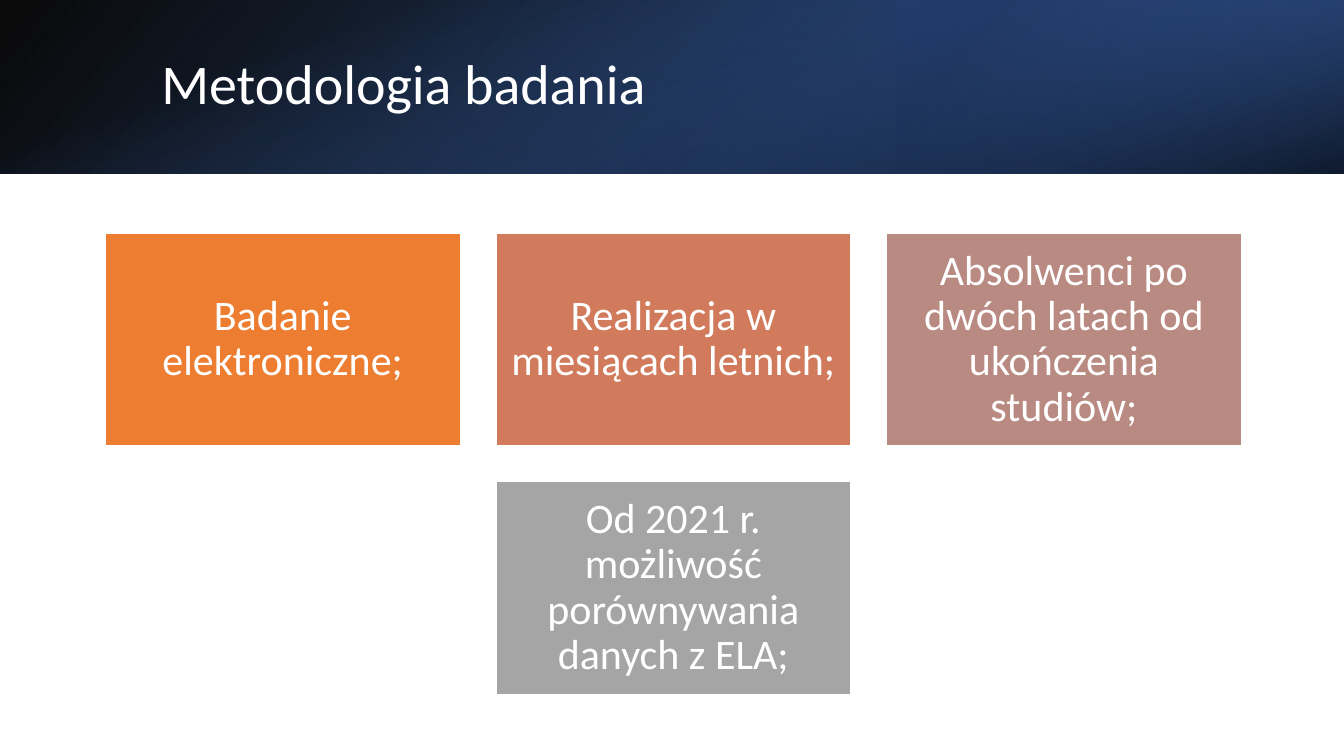
"""Builds a slide on survey method: a gradient header and four cards."""
from lxml import etree
from pptx import Presentation
from pptx.dml.color import RGBColor
from pptx.enum.shapes import MSO_SHAPE
from pptx.enum.text import MSO_ANCHOR, MSO_AUTO_SIZE, PP_ALIGN
from pptx.oxml.ns import qn
from pptx.util import Pt

RECT = MSO_SHAPE.RECTANGLE
MIDDLE = MSO_ANCHOR.MIDDLE
LEFT, CENTER = PP_ALIGN.LEFT, PP_ALIGN.CENTER
FIXED = MSO_AUTO_SIZE.NONE

COLORS = {
    "white": "FFFFFF", "black": "000000", "navy": "203864",
    "deep": "2F5597", "blue": "4472C4", "orange": "ED7D31",
    "coral": "D17B5C", "rose": "B98A82", "gray": "A5A5A5",
}
FONT = "Calibri"
WIDE, HIGH, HEAD = 960, 540, 124
TITLE = "Metodologia badania"
BANDS = [
    ((0, 0, WIDE, HEAD), 0, True, 140,
     [(0, "black", 96), (100, "deep", 100)]),
    ((WIDE * 2 / 3, 0, WIDE / 3, HEAD), 180, True, 320,
     [(19, "navy", 68), (100, "blue", 79)]),
    (((WIDE - HEAD) / 2, (HEAD - WIDE) / 2, HEAD, WIDE), 90, False, 340,
     [(23, "blue", 0), (99, "black", 74)]),
]
CARDS = [
    ("Badanie elektroniczne;", "orange", 0, 0),
    ("Realizacja w miesiącach letnich;", "coral", 1, 0),
    ("Absolwenci po dwóch latach od ukończenia studiów;", "rose", 2, 0),
    ("Od 2021 r. możliwość porównywania danych z ELA;", "gray", 1, 1),
]
CARD_W, CARD_H, GAP, TOP, INSET = 253.5, 152, 25.5, 166.5, 8.64


def color(name):
    return RGBColor.from_string(COLORS[name])


def add_rect(slide, box):
    rect = slide.shapes.add_shape(RECT, *map(Pt, box))
    rect.shadow.inherit = False
    return rect


def shade(rect, stops, angle):
    rect.fill.gradient()
    grad = rect._element.spPr.find(qn("a:gradFill"))
    for part in list(grad):
        grad.remove(part)
    grad.set("rotWithShape", "1")
    items = etree.SubElement(grad, qn("a:gsLst"))
    for pos, name, alpha in stops:
        stop = etree.SubElement(items, qn("a:gs"), pos=str(pos * 1000))
        tint = etree.SubElement(stop, qn("a:srgbClr"), val=COLORS[name])
        etree.SubElement(tint, qn("a:alpha"), val=str(alpha * 1000))
    etree.SubElement(grad, qn("a:lin"), ang=str(angle * 60000), scaled="0")


def write(shape, text, size, align):
    frame = shape.text_frame
    frame.text = text
    frame.word_wrap = True
    frame.auto_size = FIXED
    frame.vertical_anchor = MIDDLE
    para = frame.paragraphs[0]
    para.alignment = align
    para.line_spacing = 0.9
    para.font.name = FONT
    para.font.size = Pt(size)
    para.font.color.rgb = color("white")
    return frame


def add_band(slide, box, turn, flip, angle, stops):
    band = add_rect(slide, box)
    band.line.fill.background()
    band.rotation = turn
    if flip:
        band._element.spPr.find(qn("a:xfrm")).set("flipH", "1")
    shade(band, stops, angle)


def add_title(slide):
    title = slide.shapes.title
    title.left, title.top = Pt(108), Pt(27.5)
    title.width, title.height = Pt(790.5), Pt(69)
    write(title, TITLE, 40, LEFT)
    slide.shapes._spTree.append(title._element)


def add_card(slide, text, fill, col, row):
    left = (WIDE - 3 * CARD_W - 2 * GAP) / 2 + col * (CARD_W + GAP) + 1
    card = add_rect(slide, (left, TOP + row * (CARD_H + GAP), CARD_W, CARD_H))
    card.fill.solid()
    card.fill.fore_color.rgb = color(fill)
    card.line.color.rgb = color("white")
    card.line.width = Pt(1)
    frame = write(card, text, 30, CENTER)
    frame.margin_left = frame.margin_right = Pt(INSET)
    frame.margin_top = frame.margin_bottom = Pt(INSET)


def main():
    deck = Presentation()
    deck.slide_width, deck.slide_height = Pt(WIDE), Pt(HIGH)
    slide = deck.slides.add_slide(deck.slide_layouts[5])
    for band in BANDS:
        add_band(slide, *band)
    add_title(slide)
    for card in CARDS:
        add_card(slide, *card)
    deck.save("out.pptx")


if __name__ == "__main__":
    main()
